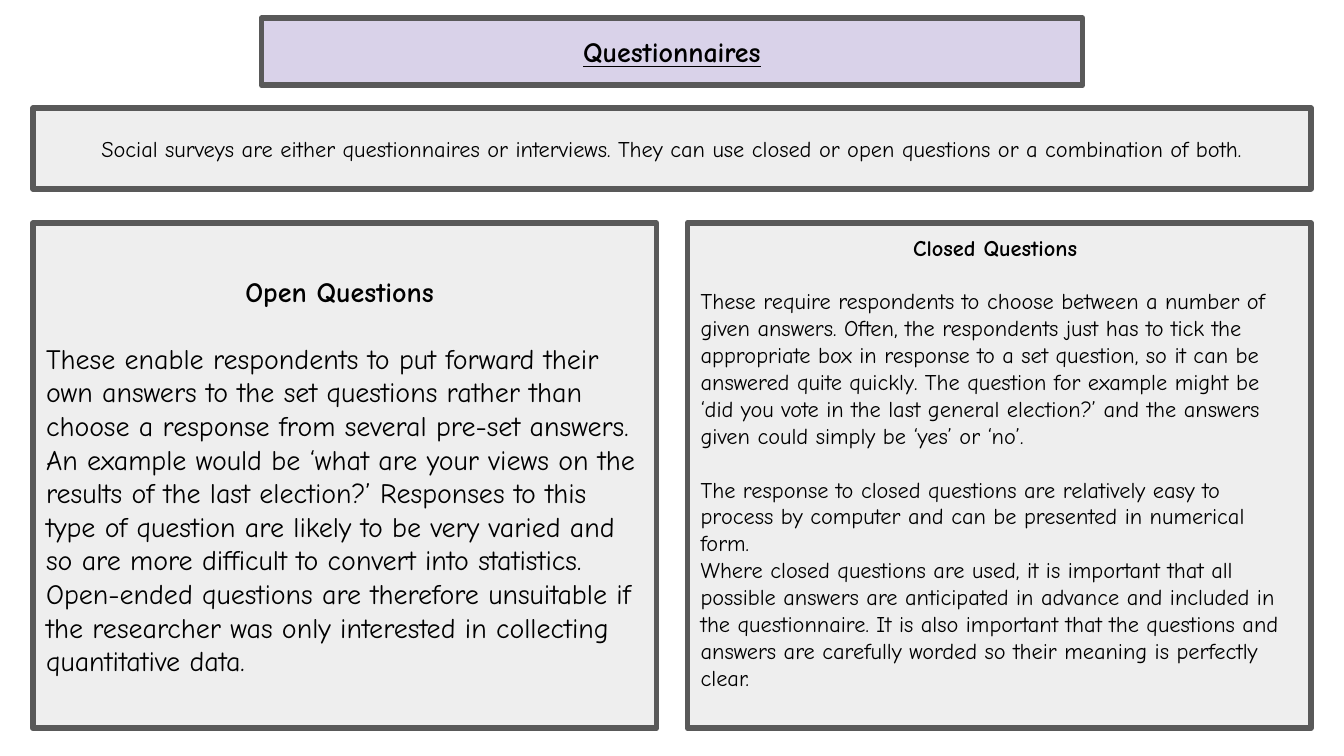
from lxml.etree import SubElement
from pptx import Presentation
from pptx.dml.color import RGBColor
from pptx.enum.shapes import MSO_SHAPE
from pptx.enum.text import MSO_ANCHOR, PP_ALIGN
from pptx.oxml.ns import qn
from pptx.util import Pt

PX = 4572
FONT = "Comic Neue"
HUES = {"lilac": "D9D2E9", "pale": "EEEEEE", "edge": "595959", "ink": "000000"}

INTRO = (
    "Social surveys are either questionnaires or interviews. "
    "They can use closed or open questions or a combination of both."
)
OPEN = [
    "These enable respondents to put forward their own answers to the set "
    "questions rather than choose a response from several pre-set answers.",
    "An example would be ‘what are your views on the results of the last "
    "election?’ Responses to this type of question are likely to be very varied "
    "and so are more difficult to convert into statistics. Open-ended questions "
    "are therefore unsuitable if the researcher was only interested in collecting "
    "quantitative data.",
]
CLOSED = [
    "These require respondents to choose between a number of given answers. "
    "Often, the respondents just has to tick the appropriate box in response to a "
    "set question, so it can be answered quite quickly. The question for example "
    "might be ‘did you vote in the last general election?’ and the answers given "
    "could simply be ‘yes’ or ‘no’.",
    "The response to closed questions are relatively easy to process by computer "
    "and can be presented in numerical form.",
    "Where closed questions are used, it is important that all possible answers "
    "are anticipated in advance and included in the questionnaire. It is also "
    "important that the questions and answers are carefully worded so their "
    "meaning is perfectly clear.",
]


def hue(name):
    """Return the named colour."""
    return RGBColor.from_string(HUES[name])


def panel(slide, box, fill, foot=20):
    """Draw a framed box and return its text frame."""
    shape = slide.shapes.add_shape(MSO_SHAPE.RECTANGLE, *(n * PX for n in box))
    shape.shadow.inherit = False
    shape.fill.solid()
    shape.fill.fore_color.rgb = hue(fill)
    shape.line.color.rgb = hue("edge")
    shape.line.width = Pt(3)
    SubElement(shape.line._ln, qn("a:round"))
    frame = shape.text_frame
    frame.word_wrap = True
    frame.vertical_anchor = MSO_ANCHOR.MIDDLE
    frame.margin_left = frame.margin_right = frame.margin_top = 20 * PX
    frame.margin_bottom = foot * PX
    return frame


def style(para, size, align, bold=False, line=False):
    """Align a paragraph and format its runs."""
    para.alignment = align
    for run in para.runs:
        font = run.font
        font.name, font.size = FONT, Pt(size)
        font.bold, font.underline = bold, line
        font.color.rgb = hue("ink")


def banner(slide, box, text, fill, size, strong=False):
    """Place a box with one centred line."""
    frame = panel(slide, box, fill)
    frame.text = text
    style(frame.paragraphs[0], size, PP_ALIGN.CENTER, strong, strong)


def card(slide, box, head, body, size, gaps, foot=20):
    """Place a heading over body text, with a blank line's gap after each index in gaps."""
    frame = panel(slide, box, "pale", foot)
    frame.text = "\n".join([head, *body])
    for i, para in enumerate(frame.paragraphs):
        align = PP_ALIGN.LEFT if i else PP_ALIGN.CENTER
        style(para, size, align, bold=i == 0)
        para.space_after = Pt(size * 1.2 if i in gaps else 0)


def main():
    """Build the slide and save it."""
    deck = Presentation()
    deck.slide_width, deck.slide_height = 2000 * PX, 1125 * PX
    slide = deck.slides.add_slide(deck.slide_layouts[6])
    left, top, wide, high = 49, 332, 928, 752
    step = 974
    banner(slide, (389, 27, 1222, 100), "Questionnaires", "lilac", 15, True)
    banner(slide, (left, 161, step + wide, 120), INTRO, "pale", 12)
    card(slide, (left, top, wide, high), "Open Questions ", OPEN, 15, {0})
    card(slide, (left + step, top, wide, high), "Closed Questions ", CLOSED, 12, {0, 1}, 60)
    deck.save("out.pptx")


if __name__ == "__main__":
    main()
